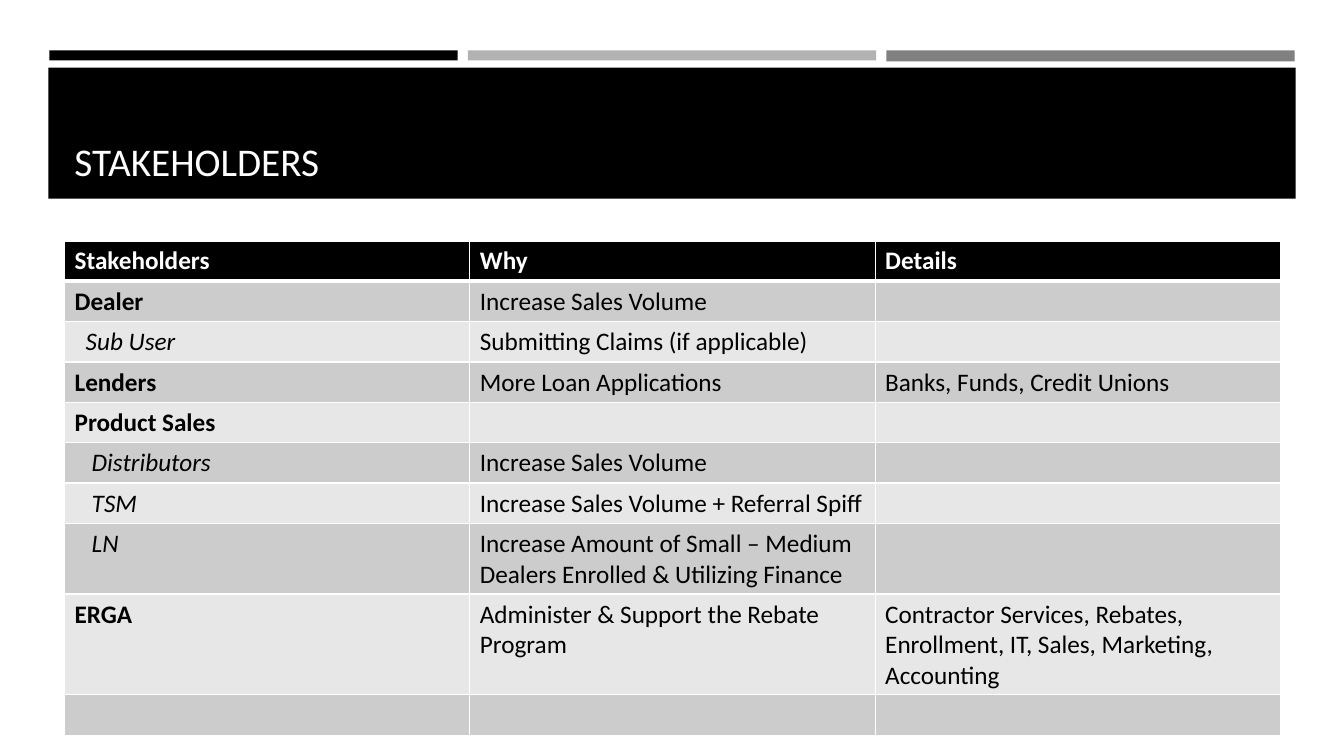
from dataclasses import dataclass

from lxml import etree
from pptx import Presentation
from pptx import util as u
from pptx.dml.color import RGBColor
from pptx.enum import shapes, text
from pptx.oxml import ns

EMU_PER_PX = 9144
FONT_NAME = "Calibri"
BLACK = RGBColor(0x00, 0x00, 0x00)
WHITE = RGBColor(0xFF, 0xFF, 0xFF)
SILVER = RGBColor(0xB2, 0xB2, 0xB2)
GRAY = RGBColor(0x80, 0x80, 0x80)
DARK_BAND = RGBColor(0xCC, 0xCC, 0xCC)
LIGHT_BAND = RGBColor(0xE7, 0xE7, 0xE7)
CELL_MARGIN = 10
COLUMN_WIDTH = 402
ROW_HEIGHT = 40
THIN_BORDER = 1
HEADER_BORDER = 3


@dataclass(frozen=True)
class Bar:
    left: int
    top: int
    width: int
    height: int
    color: RGBColor


@dataclass(frozen=True)
class Stakeholder:
    name: str
    why: str = ""
    details: str = ""
    indent: int = 0


BARS = [
    Bar(49, 50, 405, 10, BLACK),
    Bar(464, 50, 405, 10, SILVER),
    Bar(879, 50, 405, 11, GRAY),
    Bar(48, 67, 1237, 130, BLACK),
]

HEADER = Stakeholder("Stakeholders", "Why", "Details")
STAKEHOLDERS = [
    Stakeholder("Dealer", "Increase Sales Volume"),
    Stakeholder("Sub User", "Submitting Claims (if applicable)", indent=11),
    Stakeholder("Lenders", "More Loan Applications", "Banks, Funds, Credit Unions"),
    Stakeholder("Product Sales"),
    Stakeholder("Distributors", "Increase Sales Volume", indent=17),
    Stakeholder("TSM", "Increase Sales Volume + Referral Spiff", indent=17),
    Stakeholder(
        "LN",
        "Increase Amount of Small – Medium Dealers Enrolled & Utilizing Finance",
        indent=17,
    ),
    Stakeholder(
        "ERGA",
        "Administer & Support the Rebate Program",
        "Contractor Services, Rebates, Enrollment, IT, Sales, Marketing, Accounting",
    ),
    Stakeholder(""),
]


def px(length: int) -> u.Emu:
    return u.Emu(length * EMU_PER_PX)


def style_paragraph(paragraph, size: int, color: RGBColor) -> None:
    paragraph.font.name = FONT_NAME
    paragraph.font.size = u.Pt(size)
    paragraph.font.color.rgb = color


def draw_bar(slide, bar: Bar) -> None:
    shape = slide.shapes.add_shape(
        shapes.MSO_SHAPE.RECTANGLE,
        px(bar.left), px(bar.top), px(bar.width), px(bar.height),
    )
    shape.shadow.inherit = False
    shape.fill.solid()
    shape.fill.fore_color.rgb = bar.color
    shape.line.fill.background()


def draw_title(slide, title: str) -> None:
    shape = slide.shapes.add_textbox(px(64), px(77), px(1206), px(111))
    frame = shape.text_frame
    frame.word_wrap = True
    frame.vertical_anchor = text.MSO_ANCHOR.BOTTOM
    paragraph = frame.paragraphs[0]
    paragraph.text = title
    style_paragraph(paragraph, 28, WHITE)


def set_borders(cell, top: int, bottom: int) -> None:
    properties = cell._tc.get_or_add_tcPr()
    widths = {"lnL": THIN_BORDER, "lnR": THIN_BORDER, "lnT": top, "lnB": bottom}
    for tag, width in widths.items():
        line = etree.SubElement(properties, ns.qn(f"a:{tag}"), w=str(u.Pt(width)))
        fill = etree.SubElement(line, ns.qn("a:solidFill"))
        etree.SubElement(fill, ns.qn("a:srgbClr"), val=str(WHITE))


def fill_row(table, row: int, stakeholder: Stakeholder) -> None:
    is_header = row == 0
    background = BLACK if is_header else DARK_BAND if row % 2 else LIGHT_BAND
    top = HEADER_BORDER if row == 1 else THIN_BORDER
    bottom = HEADER_BORDER if is_header else THIN_BORDER
    values = (stakeholder.name, stakeholder.why, stakeholder.details)
    for column, value in enumerate(values):
        cell = table.cell(row, column)
        set_borders(cell, top, bottom)
        cell.fill.solid()
        cell.fill.fore_color.rgb = background
        is_name = column == 0
        cell.margin_left = px(CELL_MARGIN + (stakeholder.indent if is_name else 0))
        paragraph = cell.text_frame.paragraphs[0]
        if value:
            paragraph.text = value
        style_paragraph(paragraph, 18, WHITE if is_header else BLACK)
        paragraph.font.bold = is_header or (is_name and not stakeholder.indent)
        paragraph.font.italic = is_name and stakeholder.indent > 0


def draw_table(slide) -> None:
    rows = [HEADER, *STAKEHOLDERS]
    table = slide.shapes.add_table(
        len(rows), 3, px(64), px(239), px(3 * COLUMN_WIDTH), px(len(rows) * ROW_HEIGHT)
    ).table
    for row, stakeholder in enumerate(rows):
        fill_row(table, row, stakeholder)


def main() -> None:
    presentation = Presentation()
    presentation.slide_width = px(1333)
    presentation.slide_height = px(750)
    slide = presentation.slides.add_slide(presentation.slide_layouts[6])
    for bar in BARS:
        draw_bar(slide, bar)
    draw_title(slide, "STAKEHOLDERS")
    draw_table(slide)
    presentation.save("out.pptx")


if __name__ == "__main__":
    main()
